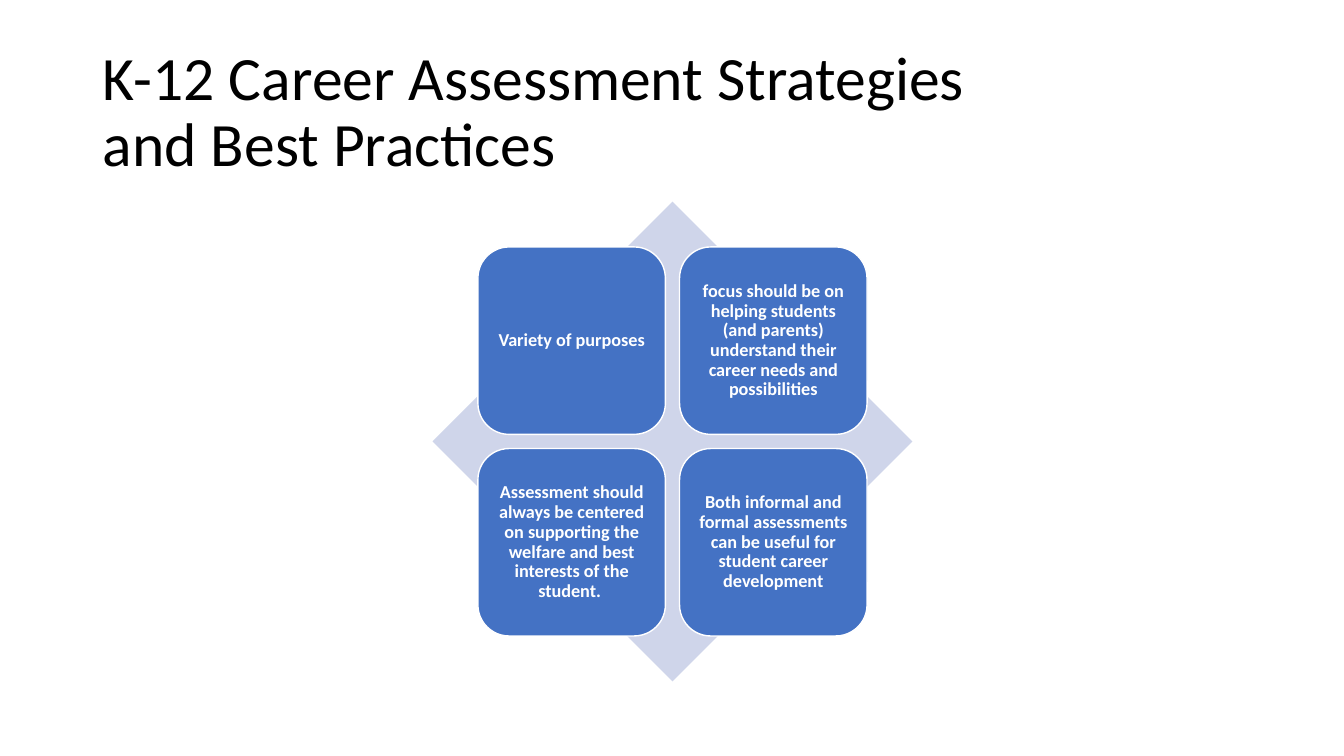
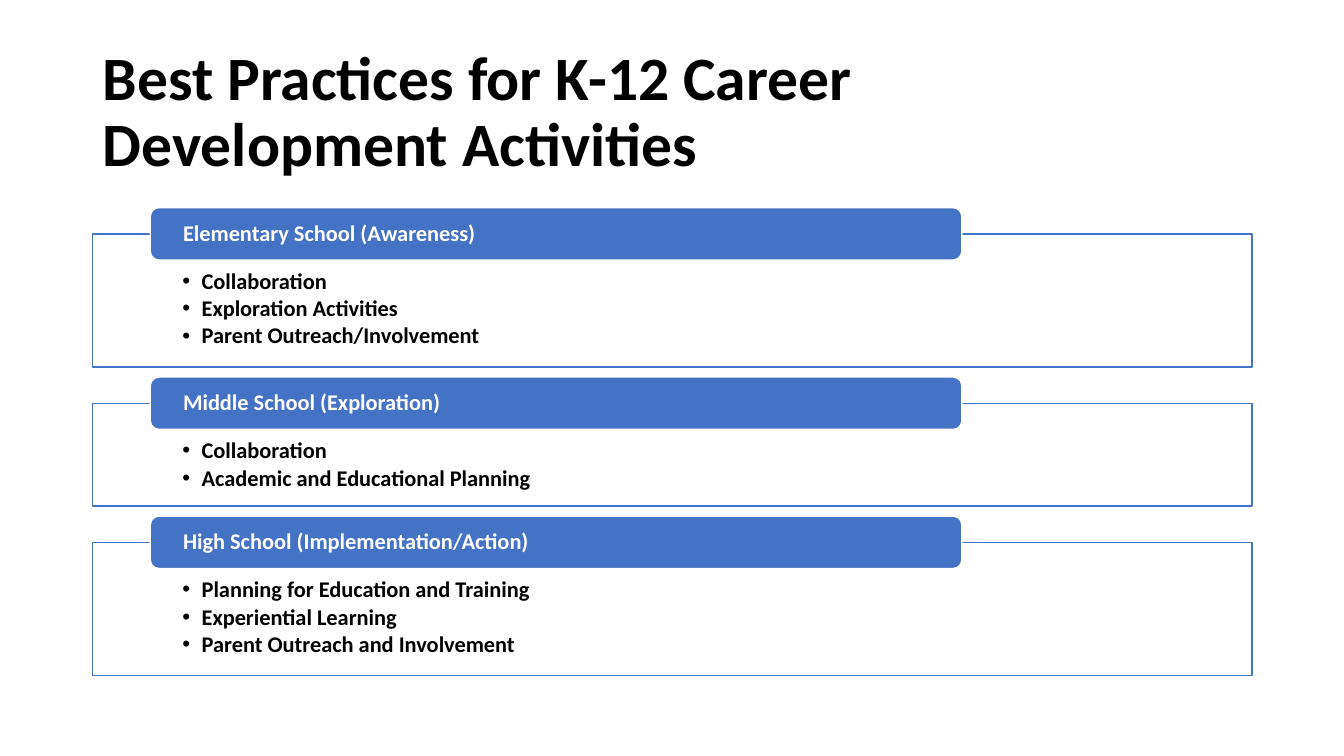
from dataclasses import dataclass

from lxml.etree import SubElement
from pptx import Presentation
from pptx.dml.color import RGBColor as RGB
from pptx.enum.shapes import MSO_SHAPE as Shape
from pptx.enum.text import MSO_ANCHOR as Anchor, MSO_AUTO_SIZE as Fit, PP_ALIGN as Align
from pptx.oxml.ns import qn
from pptx.util import Inches, Pt


@dataclass(frozen=True)
class Theme:
    face: str = "Calibri"
    ink: RGB = RGB(0x00, 0x00, 0x00)
    paper: RGB = RGB(0xFF, 0xFF, 0xFF)
    blue: RGB = RGB(0x44, 0x72, 0xC4)
    pale: RGB = RGB(0xCF, 0xD5, 0xEA)
    head: int = 44
    body: int = 16
    tile: int = 13
    left: float = 0.92
    width: float = 11.5


THEME = Theme()

PURPOSES = [
    "Variety of purposes",
    "focus should be on helping students (and parents) understand their "
    "career needs and possibilities",
    "Assessment should always be centered on supporting the welfare and best "
    "interests of the student. ",
    "Both informal and formal assessments can be useful for student "
    "career development",
]

STAGES = [
    ("Elementary School (Awareness)",
     ["Collaboration", "Exploration Activities", "Parent Outreach/Involvement"]),
    ("Middle School (Exploration)",
     ["Collaboration", "Academic and Educational Planning"]),
    ("High School (Implementation/Action)",
     ["Planning for Education and Training", "Experiential Learning",
      "Parent Outreach and Involvement"]),
]


def style(par, size, color, bold=True, align=Align.LEFT):
    par.alignment = align
    par.line_spacing = 0.9
    font = par.font
    font.name, font.size, font.bold = THEME.face, Pt(size), bold
    font.color.rgb = color


def add_slide(deck, title, bold):
    """Add a slide with the shared title style."""
    slide = deck.slides.add_slide(deck.slide_layouts[5])
    head = slide.shapes.title
    head.left, head.top = Inches(THEME.left), Inches(0.4)
    head.width, head.height = Inches(THEME.width), Inches(1.45)
    frame = head.text_frame
    frame.text = title
    frame.auto_size = Fit.NONE
    frame.vertical_anchor = Anchor.MIDDLE
    style(frame.paragraphs[0], THEME.head, THEME.ink, bold)
    return slide


def add_box(slide, kind, box, fill, line=None):
    shape = slide.shapes.add_shape(kind, *map(Inches, box))
    shape.shadow.inherit = False
    shape.fill.solid()
    shape.fill.fore_color.rgb = fill
    if line is None:
        shape.line.fill.background()
    else:
        shape.line.color.rgb = line
        shape.line.width = Pt(1)
    return shape


def write(shape, lines, insets, anchor=Anchor.MIDDLE):
    """Fill a shape with one paragraph per line and return the paragraphs."""
    frame = shape.text_frame
    frame.word_wrap = True
    frame.vertical_anchor = anchor
    (frame.margin_left, frame.margin_top,
     frame.margin_right, frame.margin_bottom) = map(Inches, insets)
    frame.text = "\n".join(lines)
    return frame.paragraphs


def add_bullet(par):
    props = par._p.get_or_add_pPr()
    props.set("marL", str(Inches(0.19)))
    props.set("indent", str(-Inches(0.19)))
    SubElement(props, qn("a:buFont")).set("typeface", "Arial")
    SubElement(props, qn("a:buChar")).set("char", "•")


def add_matrix(slide, texts):
    """Lay four tiles in a grid over a diamond."""
    left, top, span = 4.29, 2, 4.76
    inset, side, pitch = 0.45, 1.86, 2
    add_box(slide, Shape.DIAMOND, (left, top, span, span), THEME.pale)
    for i, text in enumerate(texts):
        row, col = divmod(i, 2)
        box = (left + inset + col * pitch, top + inset + row * pitch, side, side)
        tile = add_box(slide, Shape.ROUNDED_RECTANGLE, box, THEME.blue, THEME.paper)
        par, = write(tile, [text], [0.05] * 4)
        style(par, THEME.tile, THEME.paper, align=Align.CENTER)


def add_stage(slide, top, name, items):
    """Draw a framed list under its header and return the frame's bottom."""
    tab = 0.52
    edge = top + tab / 2
    high = 0.42 + 0.3 * len(items)
    panel = add_box(slide, Shape.RECTANGLE, (THEME.left, edge, THEME.width, high),
                    THEME.paper, THEME.blue)
    for par in write(panel, items, (0.89, 0.36, 0.89, 0.12), Anchor.TOP):
        style(par, THEME.body, THEME.ink)
        par.space_after = Pt(2.2)
        add_bullet(par)
    header = add_box(slide, Shape.ROUNDED_RECTANGLE, (1.49, top, 8.05, tab),
                     THEME.blue, THEME.paper)
    par, = write(header, [name], (0.3, 0, 0.3, 0))
    style(par, THEME.body, THEME.paper)
    return edge + high


def main():
    deck = Presentation()
    deck.slide_width, deck.slide_height = Inches(13.33), Inches(7.5)

    slide = add_slide(deck, "K-12 Career Assessment Strategies\vand Best Practices", False)
    add_matrix(slide, PURPOSES)

    slide = add_slide(deck, "Best Practices for K-12 Career\vDevelopment Activities", True)
    top = 2.06
    for name, items in STAGES:
        top = add_stage(slide, top, name, items) + 0.1

    deck.save("out.pptx")


if __name__ == "__main__":
    main()
